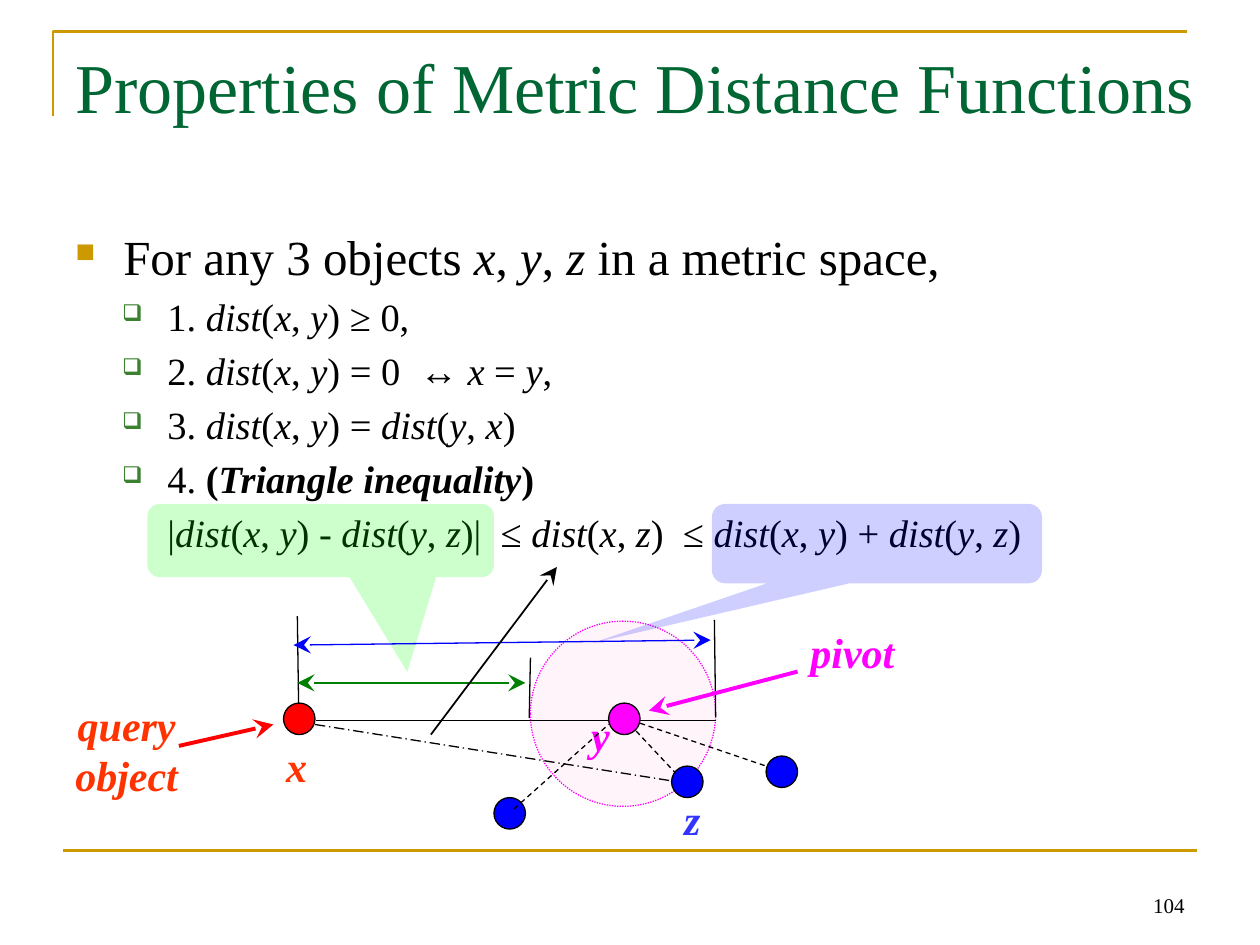
"""Builds a slide on the properties of metric distance functions."""
from dataclasses import dataclass

from pptx import Presentation
from pptx.dml.color import RGBColor
from pptx.enum.dml import MSO_LINE
from pptx.enum.shapes import MSO_CONNECTOR, MSO_SHAPE
from pptx.enum.text import MSO_ANCHOR, PP_ALIGN
from pptx.oxml.ns import qn
from pptx.util import Inches, Pt
from lxml.etree import SubElement


@dataclass(frozen=True)
class Theme:
    """Colours, font and type sizes of the slide."""
    font: str = "Times New Roman"
    gold: str = "CC9900"
    title: str = "006633"
    ink: str = "000000"
    bullet: str = "3B812F"
    query: str = "FF0000"
    query_label: str = "FF3300"
    pivot: str = "FF00FF"
    pivot_zone: str = "FF99CC"
    neighbour: str = "0000FF"
    neighbour_label: str = "3333FF"
    lower_bound: str = "00FF00"
    lower_span: str = "008000"
    title_size: int = 40
    lead_size: int = 28
    item_size: int = 22
    label_size: int = 24
    number_size: int = 12


THEME = Theme()
DOT_SIZE = 0.25
ITEM_SPACE = 4.4
PROPERTIES = (
    "1. *dist*(*x*, *y*) ≥ 0,",
    "2. *dist*(*x*, *y*) = 0  ↔ *x* = *y*,",
    "3. *dist*(*x*, *y*) = *dist*(*y*, *x*)",
)
INEQUALITY = ("|*dist*(*x*, *y*) - *dist*(*y*, *z*)|  ≤ *dist*(*x*, *z*)"
              "  ≤ *dist*(*x*, *y*) + *dist*(*y*, *z*)")


def rgb(colour):
    """Turn a hex string into a colour."""
    return RGBColor.from_string(colour)


def write(paragraph, text, size=THEME.item_size, colour=THEME.ink, bold=False,
          italic=False, align=PP_ALIGN.LEFT):
    """Write text in a paragraph; asterisks switch italics on and off."""
    paragraph.alignment = align
    for index, part in enumerate(text.split("*")):
        if part:
            run = paragraph.add_run()
            run.text = part
            run.font.name = THEME.font
            run.font.size = Pt(size)
            run.font.bold = bold
            run.font.italic = italic or index % 2 == 1
            run.font.color.rgb = rgb(colour)


def add_frame(slide, left, top, width, height, wrap=True, anchor=MSO_ANCHOR.TOP):
    """Add a text box and return its text frame."""
    box = slide.shapes.add_textbox(
        Inches(left), Inches(top), Inches(width), Inches(height))
    box.text_frame.word_wrap = wrap
    box.text_frame.vertical_anchor = anchor
    return box.text_frame


def add_label(slide, lines, left, top, width, colour, height=0.5):
    """Add a bold italic diagram label, one paragraph a line."""
    frame = add_frame(slide, left, top, width, height, wrap=False)
    frame.margin_left = frame.margin_right = Inches(0.02)
    for index, line in enumerate(lines.split("\n")):
        paragraph = frame.add_paragraph() if index else frame.paragraphs[0]
        write(paragraph, line, size=THEME.label_size, colour=colour,
              bold=True, italic=True, align=PP_ALIGN.CENTER)


def indent(paragraph, margin, hanging, space, bullet=None, colour=None, percent=60):
    """Set indents, space before and an optional bullet."""
    paragraph.space_before = Pt(space)
    properties = paragraph._p.get_or_add_pPr()
    properties.set("marL", str(Inches(margin)))
    properties.set("indent", str(Inches(-hanging)))
    if bullet:
        bullet_colour = SubElement(properties, qn("a:buClr"))
        SubElement(bullet_colour, qn("a:srgbClr"), val=colour)
        SubElement(properties, qn("a:buSzPct"), val=str(percent * 1000))
        SubElement(properties, qn("a:buChar"), char=bullet)


def add_body(slide):
    """Add the lead sentence and the four metric properties."""
    frame = add_frame(slide, 0.5, 1.75, 8.92, 2.8)
    lead = frame.paragraphs[0]
    write(lead, "For any 3 objects *x*, *y*, *z* in a metric space,",
          size=THEME.lead_size, align=PP_ALIGN.JUSTIFY)
    indent(lead, 0.38, 0.38, 6.5, "■", THEME.gold, 55)
    for text in PROPERTIES:
        item = frame.add_paragraph()
        write(item, text, align=PP_ALIGN.JUSTIFY)
        indent(item, 0.73, 0.36, ITEM_SPACE, "❑", THEME.bullet)
    triangle = frame.add_paragraph()
    write(triangle, "4. ", align=PP_ALIGN.JUSTIFY)
    write(triangle, "(*Triangle inequality*)", bold=True, align=PP_ALIGN.JUSTIFY)
    indent(triangle, 0.73, 0.36, ITEM_SPACE, "❑", THEME.bullet)
    formula = frame.add_paragraph()
    write(formula, INEQUALITY, align=PP_ALIGN.JUSTIFY)
    indent(formula, 0.73, 0, ITEM_SPACE)


def add_area(slide, kind, left, top, width, height, fill, opacity=100,
             line=None, dash=None):
    """Add a filled preset shape with an optional outline."""
    area = slide.shapes.add_shape(
        kind, Inches(left), Inches(top), Inches(width), Inches(height))
    area.shadow.inherit = False
    area.fill.solid()
    area.fill.fore_color.rgb = rgb(fill)
    if opacity < 100:
        tint = area._element.spPr.find(qn("a:solidFill")).find(qn("a:srgbClr"))
        SubElement(tint, qn("a:alpha"), val=str(opacity * 1000))
    if line:
        area.line.color.rgb = rgb(line)
        area.line.width = Pt(0.75)
        area.line.dash_style = dash
    else:
        area.line.fill.background()
    return area


def add_dot(slide, left, top, colour):
    """Add an object of the metric space."""
    add_area(slide, MSO_SHAPE.OVAL, left, top, DOT_SIZE, DOT_SIZE, colour,
             line=THEME.ink)


def add_callout(slide, left, width, height, colour, opacity, tip):
    """Add a callout over one side of the inequality."""
    callout = add_area(slide, MSO_SHAPE.ROUNDED_RECTANGULAR_CALLOUT,
                       left, 4, width, height, colour, opacity)
    callout.adjustments[0], callout.adjustments[1] = tip


def add_line(slide, start, end, colour=THEME.ink, width=0.75, dash=None, arrows=()):
    """Add a straight line; arrows names the ends that carry a head."""
    line = slide.shapes.add_connector(
        MSO_CONNECTOR.STRAIGHT, *(Inches(value) for value in (*start, *end)))
    line.line.color.rgb = rgb(colour)
    line.line.width = Pt(width)
    line.line.dash_style = dash
    for arrow in arrows:
        SubElement(line.line._get_or_add_ln(), qn(f"a:{arrow}End"),
                   type="stealth", w="lg", len="lg")
    SubElement(line._element.spPr, qn("a:effectLst"))


def add_decoration(slide):
    """Add the gold corner, the bottom rule and the slide number."""
    builder = slide.shapes.build_freeform(Inches(0.42), Inches(0.92))
    builder.add_line_segments(
        [(Inches(0.42), Inches(0.25)), (Inches(9.42), Inches(0.25))], close=False)
    corner = builder.convert_to_shape()
    corner.shadow.inherit = False
    corner.fill.background()
    corner.line.color.rgb = rgb(THEME.gold)
    corner.line.width = Pt(1.5)
    add_line(slide, (0.5, 6.75), (9.5, 6.75), THEME.gold, 1.5)
    number = add_frame(slide, 7.17, 6.83, 2.33, 0.5, anchor=MSO_ANCHOR.BOTTOM)
    write(number.paragraphs[0], "104", size=THEME.number_size, align=PP_ALIGN.RIGHT)


def add_diagram(slide):
    """Add the query object, the pivot, its neighbours and the distances."""
    both = ("head", "tail")
    add_dot(slide, 2.25, 5.58, THEME.query)
    add_label(slide, "x", 2.17, 5.83, 0.37, THEME.query_label)
    add_label(slide, "y", 4.59, 5.58, 0.35, THEME.pivot)
    add_label(slide, "z", 5.33, 6.25, 0.33, THEME.neighbour_label)
    add_line(slide, (5, 5.75), (5.45, 6.23), dash=MSO_LINE.DASH)
    add_line(slide, (2.51, 5.72), (5.68, 5.72))
    add_dot(slide, 4.83, 5.58, THEME.pivot)
    add_line(slide, (2.36, 4.89), (2.37, 5.58))
    add_line(slide, (4.2, 5.7), (4.21, 5.22))
    add_line(slide, (2.36, 5.42), (4.17, 5.42), THEME.lower_span, arrows=both)
    add_callout(slide, 1.17, 2.75, 0.58, THEME.lower_bound, 20, (0.25, 1.8))
    add_line(slide, (5.67, 4.92), (5.68, 5.69))
    add_line(slide, (2.33, 5.12), (5.64, 5.08), THEME.neighbour, arrows=both)
    add_callout(slide, 5.65, 2.62, 0.63, THEME.neighbour, 19, (-0.86, 1.25))
    add_line(slide, (2.5, 5.75), (5.41, 6.21), dash=MSO_LINE.LONG_DASH_DOT)
    add_dot(slide, 5.33, 6.08, THEME.neighbour)
    add_line(slide, (1.42, 5.92), (2.17, 5.75), THEME.query, 2.25, arrows=("tail",))
    add_label(slide, "query\nobject", 0.5, 5.5, 1.01, THEME.query_label, 0.9)
    add_line(slide, (6.33, 5.33), (5.15, 5.64), THEME.pivot, 2.25, arrows=("tail",))
    add_label(slide, "pivot", 6.33, 4.92, 0.87, THEME.pivot)
    add_dot(slide, 6.08, 6, THEME.neighbour)
    add_line(slide, (5.08, 5.74), (6.08, 6.08), dash=MSO_LINE.DASH)
    add_dot(slide, 3.92, 6.33, THEME.neighbour)
    add_line(slide, (4.08, 6.42), (4.83, 5.75), dash=MSO_LINE.DASH)
    add_line(slide, (3.42, 5.83), (4.42, 4.5), width=1, arrows=("tail",))


def main():
    """Build and save the slide."""
    deck = Presentation()
    deck.slide_width, deck.slide_height = Inches(10), Inches(7.5)
    slide = deck.slides.add_slide(deck.slide_layouts[6])
    add_decoration(slide)
    add_area(slide, MSO_SHAPE.OVAL, 4.21, 4.93, 1.47, 1.47, THEME.pivot_zone, 10,
             THEME.pivot, MSO_LINE.ROUND_DOT)
    title = add_frame(slide, 0.5, 0.3, 9.25, 1.25)
    write(title.paragraphs[0], "Properties of Metric Distance Functions",
          size=THEME.title_size, colour=THEME.title)
    add_body(slide)
    add_diagram(slide)
    deck.save("out.pptx")


if __name__ == "__main__":
    main()
